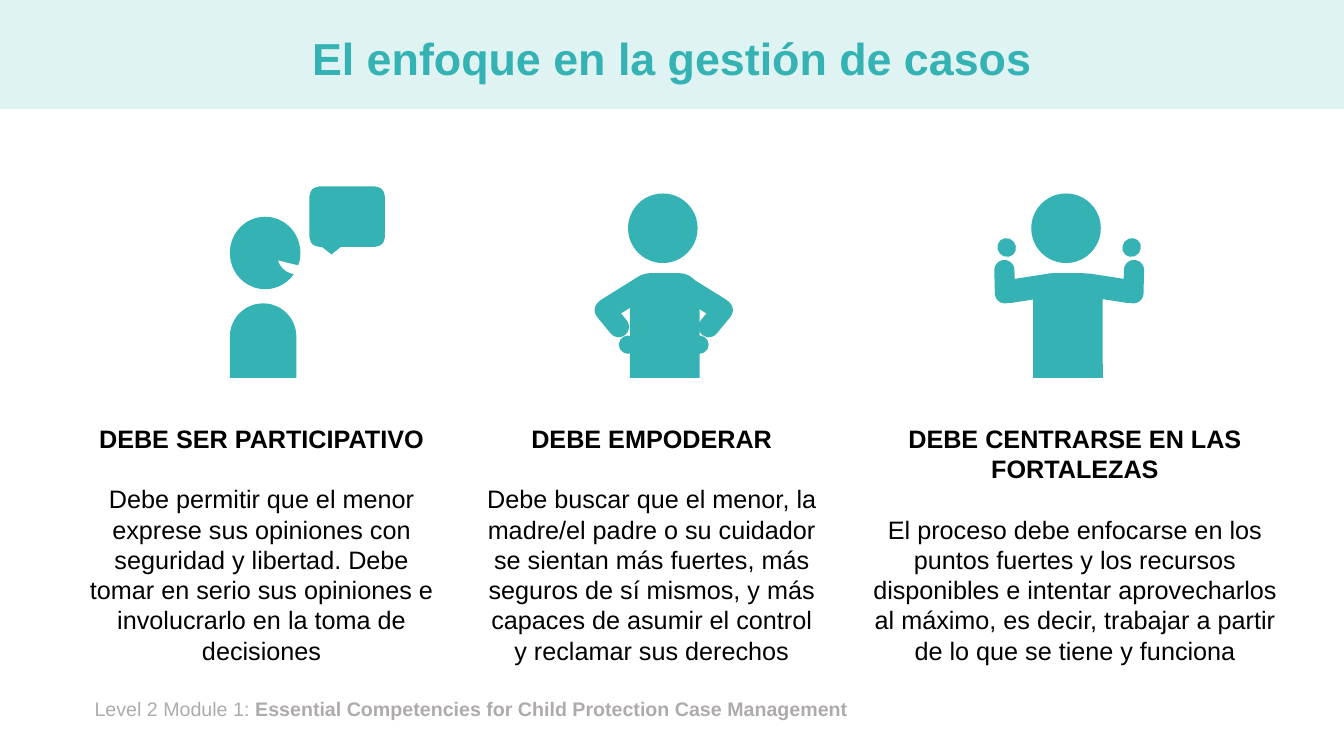
"""Build the slide on the three principles of case management."""
from dataclasses import dataclass

from pptx import Presentation
from pptx.dml.color import RGBColor
from pptx.enum.shapes import MSO_SHAPE as Preset
from pptx.enum.text import MSO_ANCHOR as Anchor, PP_ALIGN as Align
from pptx.shapes.autoshape import Shape
from pptx.shapes.shapetree import GroupShapes
from pptx.slide import Slide
from pptx.text.text import TextFrame, _Paragraph as Paragraph
from pptx.util import Pt

TEAL = RGBColor(0x35, 0xB2, 0xB4)
PALE_TEAL = RGBColor(0xDE, 0xF3, 0xF2)
GREY = RGBColor(0xAF, 0xAB, 0xAB)
BLACK = RGBColor(0, 0, 0)
WHITE = RGBColor(0xFF, 0xFF, 0xFF)

FRAME = {"word_wrap": True, "vertical_anchor": Anchor.TOP}
TITLE_FONT = {"name": "Arial", "size": Pt(32), "bold": True}
HEADING_FONT = {"name": "Arial", "size": Pt(18), "bold": True}
BODY_FONT = HEADING_FONT | {"bold": False}
FOOTER_FONT = {"name": "Arial", "size": Pt(14), "bold": False}


@dataclass(frozen=True)
class Principle:
    left: float
    width: float
    height: float
    heading: str
    body: str


@dataclass(frozen=True)
class Part:
    preset: Preset
    left: float
    top: float
    width: float
    height: float
    adjustments: tuple[float, ...] = ()
    rotation: float = 0
    color: RGBColor = TEAL


@dataclass(frozen=True)
class Limb:
    reach: float
    middle: float
    width: float
    height: float
    rotation: float = 0
    preset: Preset = Preset.ROUND_2_SAME_RECTANGLE


@dataclass(frozen=True)
class Figure:
    torso_left: float
    axis: float
    limbs: tuple[Limb, ...]


PRINCIPLES = (
    Principle(51.8, 270, 181.4, "DEBE SER PARTICIPATIVO",
              "Debe permitir que el menor exprese sus opiniones con seguridad y libertad. "
              "Debe tomar en serio sus opiniones e involucrarlo en la toma de decisiones"),
    Principle(337.7, 255.6, 181.4, "DEBE EMPODERAR",
              "Debe buscar que el menor, la madre/el padre o su cuidador se sientan más "
              "fuertes, más seguros de sí mismos, y más capaces de asumir el control y "
              "reclamar sus derechos"),
    Principle(609.8, 316.1, 203.8, "DEBE CENTRARSE EN LAS FORTALEZAS",
              "El proceso debe enfocarse en los puntos fuertes y los recursos disponibles e "
              "intentar aprovecharlos al máximo, es decir, trabajar a partir de lo que se "
              "tiene y funciona"),
)

SPEAKER = (
    Part(Preset.OVAL, 164.2, 154.8, 50.4, 51.8),
    Part(Preset.ROUND_2_SAME_RECTANGLE, 164.2, 216.7, 47.5, 53.3, (0.5, 0)),
    Part(Preset.CHORD, 198, 167.8, 27.4, 28.1, (27, 97.34), color=WHITE),
    Part(Preset.ROUNDED_RECTANGULAR_CALLOUT, 221, 133.2, 54, 43.2),
)

FIGURES = (
    Figure(450, 474.1, (
        Limb(27, 212.4, 15.8, 47.5, 301.9),
        Limb(37.1, 227.5, 14.8, 30.2, 219.3),
        Limb(25.6, 246.2, 13, 13, preset=Preset.OVAL))),
    Figure(738, 763.7, (
        Limb(28.1, 205.9, 16.6, 46.4, 98.8),
        Limb(46.1, 201.2, 14.4, 31, 181.3),
        Limb(44.6, 176.8, 13, 13.7, 40.6, Preset.OVAL))),
)


def apply(target: object, values: dict[str, object]) -> None:
    for attribute, value in values.items():
        setattr(target, attribute, value)


def place(left: float, top: float, width: float, height: float) -> tuple[Pt, ...]:
    return Pt(left), Pt(top), Pt(width), Pt(height)


def add_run(paragraph: Paragraph, text: str, font: dict[str, object], color: RGBColor) -> None:
    run = paragraph.add_run()
    run.text = text
    apply(run.font, font)
    run.font.color.rgb = color


def add_frame(slide: Slide, *box: float) -> TextFrame:
    frame = slide.shapes.add_textbox(*place(*box)).text_frame
    apply(frame, FRAME)
    return frame


def draw_part(shapes: GroupShapes, part: Part) -> Shape:
    shape = shapes.add_shape(
        part.preset, *place(part.left, part.top, part.width, part.height))
    shape.rotation = part.rotation
    shape.shadow.inherit = False
    shape.fill.solid()
    shape.fill.fore_color.rgb = part.color
    shape.line.fill.background()
    for index, value in enumerate(part.adjustments):
        shape.adjustments[index] = value
    return shape


def figure_parts(figure: Figure) -> list[Part]:
    parts = [
        Part(Preset.ROUND_2_SAME_RECTANGLE, figure.torso_left, 195.1, 49.7, 74.9, (0.29, 0)),
        Part(Preset.OVAL, figure.torso_left - 1.4, 138.2, 49.7, 49.7),
    ]
    for limb in figure.limbs:
        rounding = () if limb.preset == Preset.OVAL else (0.5, 0.5)
        for side in (1, -1):
            parts.append(Part(
                limb.preset, figure.axis + side * limb.reach - limb.width / 2,
                limb.middle - limb.height / 2, limb.width, limb.height,
                rounding, side * limb.rotation))
    return parts


def draw_principle(slide: Slide, principle: Principle) -> None:
    frame = add_frame(slide, principle.left, 298.8, principle.width, principle.height)
    heading, body = frame.paragraphs[0], frame.add_paragraph()
    heading.space_after = Pt(21.6)
    add_run(heading, principle.heading, HEADING_FONT, BLACK)
    add_run(body, principle.body, BODY_FONT, BLACK)
    for paragraph in (heading, body):
        paragraph.alignment = Align.CENTER


def main() -> None:
    deck = Presentation()
    deck.slide_width, deck.slide_height = Pt(960), Pt(540)
    slide = deck.slides.add_slide(deck.slide_layouts[5])

    title = slide.shapes.title
    band = draw_part(slide.shapes, Part(Preset.RECTANGLE, 0, 0, 960, 77.8, color=PALE_TEAL))
    title.element.addprevious(band.element)
    apply(title, dict(zip(("left", "top", "width", "height"), place(66.2, 9.4, 828, 68.4))))
    apply(title.text_frame, FRAME | {"vertical_anchor": Anchor.MIDDLE})
    approach = title.text_frame.paragraphs[0]
    apply(approach, {"alignment": Align.CENTER, "line_spacing": 0.9})
    add_run(approach, "El enfoque en la gestión de casos", TITLE_FONT, TEAL)

    module = add_frame(slide, 60.5, 494.6, 760.3, 24.5).paragraphs[0]
    add_run(module, "Level 2 Module 1: ", FOOTER_FONT, GREY)
    add_run(module, "Essential Competencies for Child Protection Case Management",
            FOOTER_FONT | {"bold": True}, GREY)

    for principle in PRINCIPLES:
        draw_principle(slide, principle)
    for parts in (SPEAKER, *map(figure_parts, FIGURES)):
        icon = slide.shapes.add_group_shape()
        for part in parts:
            draw_part(icon.shapes, part)

    deck.save("out.pptx")


if __name__ == "__main__":
    main()
